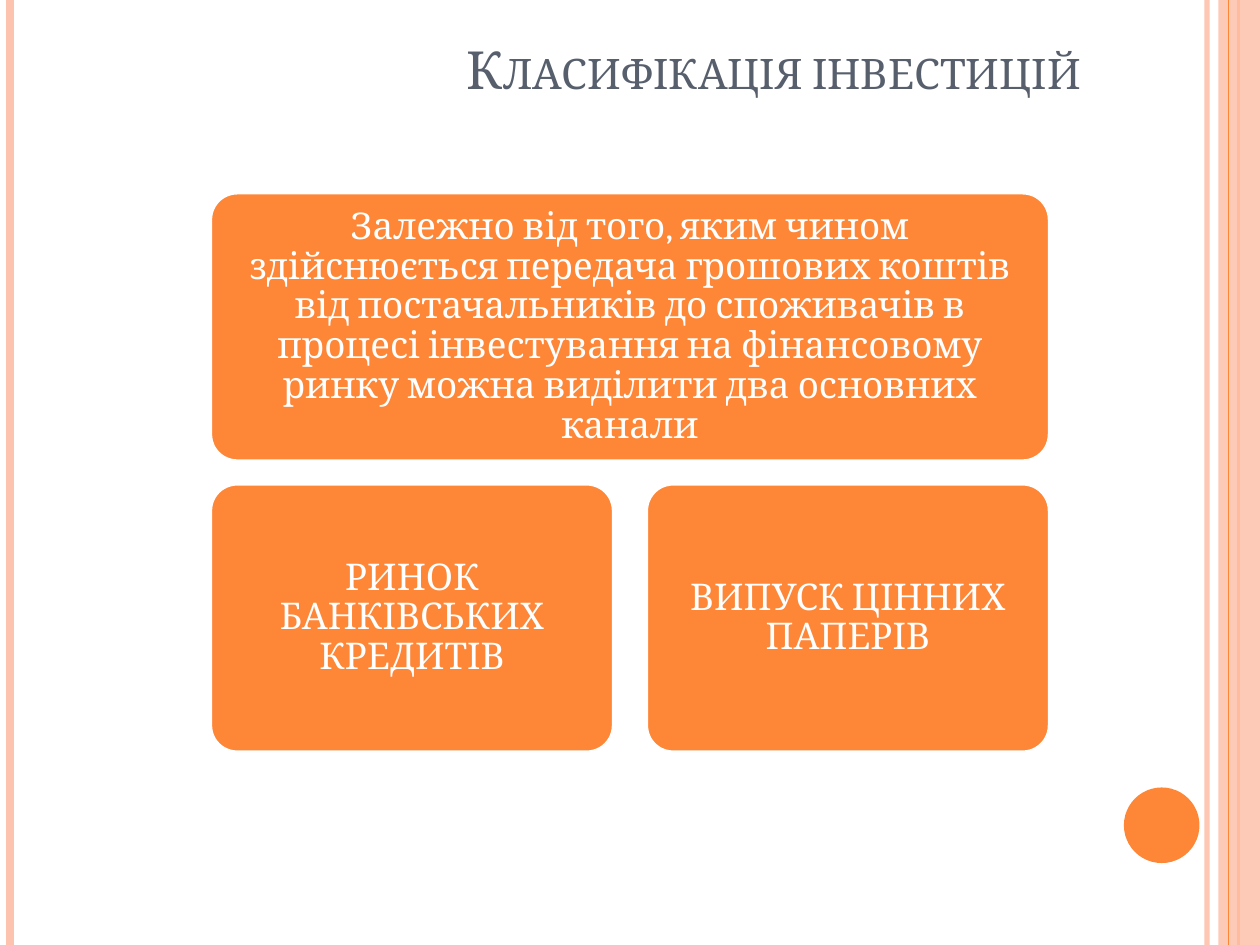
from dataclasses import dataclass

from pptx import Presentation
from pptx import util as u
from pptx.dml.color import RGBColor
from pptx.enum import shapes, text
from pptx.oxml.ns import qn
from lxml import etree


@dataclass(frozen=True)
class Theme:
    orange: str = "FE8637"
    peach: str = "FEC3AE"
    slate: str = "575F6D"
    white: str = "FFFFFF"
    font: str = "Cambria"
    title_size: float = 30
    body_size: float = 21


THEME = Theme()
PAGE_WIDTH, PAGE_HEIGHT = 10, 7.5


def paint(color_format, color, opacity=100):
    """Set a colour on a solid fill, with optional opacity in percent."""
    color_format.fore_color.rgb = RGBColor.from_string(color)
    if opacity < 100:
        node = color_format.fore_color._xFill.find(qn("a:srgbClr"))
        etree.SubElement(node, qn("a:alpha"), val=str(opacity * 1000))


def add_stripe(page, x, color, width, opacity=100):
    """Draw a line down the full height of the page."""
    line = page.shapes.add_connector(
        shapes.MSO_CONNECTOR.STRAIGHT,
        u.Inches(x), 0, u.Inches(x), u.Inches(PAGE_HEIGHT))
    line.line.width = u.Pt(width)
    line.line.fill.solid()
    paint(line.line.fill, color, opacity)
    etree.SubElement(line._element.spPr, qn("a:effectLst"))


def add_block(page, kind, left, top, width, height, color, opacity=100):
    """Add a filled shape without outline or shadow."""
    block = page.shapes.add_shape(kind, *map(u.Inches, (left, top, width, height)))
    block.shadow.inherit = False
    block.fill.solid()
    paint(block.fill, color, opacity)
    block.line.fill.background()
    return block


def write(frame, words, *, size, color, align, anchor, line_spacing=None,
          space_after=None, inset=None, small_caps=False):
    """Put one formatted paragraph into a text frame."""
    frame.word_wrap = True
    frame.vertical_anchor = anchor
    if inset is not None:
        frame.margin_left = frame.margin_right = u.Inches(inset)
        frame.margin_top = frame.margin_bottom = u.Inches(inset)
    para = frame.paragraphs[0]
    para.alignment = align
    para.line_spacing = line_spacing
    para.space_after = space_after
    span = para.add_run()
    span.text = words
    span.font.name = THEME.font
    span.font.size = u.Pt(size)
    span.font.color.rgb = RGBColor.from_string(color)
    if small_caps:
        span.font._element.set("cap", "small")


def add_title(page, words):
    box = page.shapes.add_textbox(*map(u.Inches, (0.51, 0.13, 8.17, 0.71)))
    write(box.text_frame, words, size=THEME.title_size, color=THEME.slate,
          align=text.PP_ALIGN.RIGHT, anchor=text.MSO_ANCHOR.BOTTOM,
          small_caps=True)


def add_card(page, words, left, top, width, height):
    card = add_block(page, shapes.MSO_SHAPE.ROUNDED_RECTANGLE,
                     left, top, width, height, THEME.orange)
    card.adjustments[0] = 0.1
    card.line.color.rgb = RGBColor.from_string(THEME.white)
    card.line.width = u.Pt(2)
    write(card.text_frame, words, size=THEME.body_size, color=THEME.white,
          align=text.PP_ALIGN.CENTER, anchor=text.MSO_ANCHOR.MIDDLE,
          line_spacing=0.9, space_after=u.Pt(7), inset=0.09)


def add_frame(page):
    """Side stripes, right band and corner disc."""
    add_stripe(page, 9.58, THEME.peach, 3, opacity=93)
    add_stripe(page, 0.08, THEME.peach, 4.5)
    add_stripe(page, 9.83, THEME.orange, 1.5)
    add_block(page, shapes.MSO_SHAPE.RECTANGLE, 9.67, 0, 0.33, PAGE_HEIGHT,
              THEME.peach, opacity=87)
    add_stripe(page, 9.75, THEME.orange, 0.75)
    add_block(page, shapes.MSO_SHAPE.OVAL, 8.92, 6.25, 0.6, 0.6, THEME.orange)


def add_hierarchy(page, heading, channels):
    """One wide card above a row of equal cards."""
    left, top, width, height = 1.67, 1.53, 6.66, 2.13
    column_gap, row_gap = 0.26, 0.18
    add_card(page, heading, left, top, width, height)
    card_width = (width - column_gap * (len(channels) - 1)) / len(channels)
    for column, channel in enumerate(channels):
        add_card(page, channel, left + column * (card_width + column_gap),
                 top + height + row_gap, card_width, height)


def main():
    deck = Presentation()
    deck.slide_width = u.Inches(PAGE_WIDTH)
    deck.slide_height = u.Inches(PAGE_HEIGHT)
    page = deck.slides.add_slide(deck.slide_layouts[6])

    add_frame(page)
    add_title(page, "Класифікація інвестицій")
    add_hierarchy(
        page,
        "Залежно від того, яким чином здійснюється передача грошових коштів "
        "від постачальників до споживачів в процесі інвестування на "
        "фінансовому ринку можна виділити два основних канали",
        ["РИНОК БАНКІВСЬКИХ КРЕДИТІВ", "ВИПУСК ЦІННИХ ПАПЕРІВ"])

    deck.save("out.pptx")


if __name__ == "__main__":
    main()
